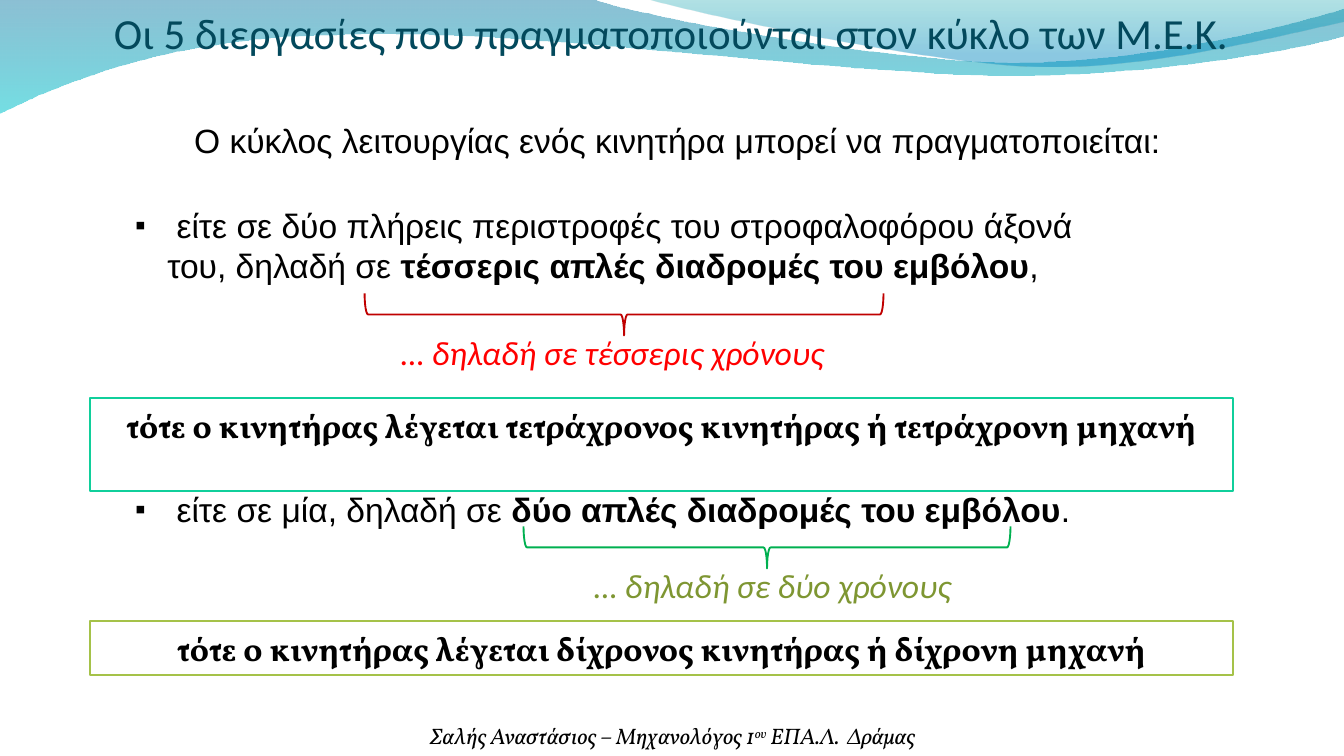
"""Build the slide on the four-stroke and two-stroke engine cycles."""
from lxml.etree import Element, SubElement
from pptx import Presentation
from pptx.dml.color import RGBColor
from pptx.enum.shapes import MSO_SHAPE as Shape
from pptx.enum.text import MSO_ANCHOR as Anchor, MSO_AUTO_SIZE as AutoSize, PP_ALIGN as Align
from pptx.oxml.ns import qn
from pptx.util import Pt

SCALE = 914400 / 134.4
BULLET_INDENT = 32

TITLE = ("Οι 5 διεργασίες που πραγματοποιούνται στον κύκλο των Μ.Ε.Κ.", (26, 0, 1292, 65))
FOOTER = (["Σαλής Αναστάσιος – Μηχανολόγος 1", "ου", " ΕΠΑ.Λ.  Δράμας"], (69, 716, 1207, 40))
INTRO = ("Ο κύκλος λειτουργίας ενός κινητήρα μπορεί να πραγματοποιείται:", (164, 113, 1027, 54))
BULLETS = [
    ([" είτε σε δύο πλήρεις περιστροφές του στροφαλοφόρου άξονά του, δηλαδή σε ",
      "τέσσερις απλές διαδρομές του εμβόλου", ","], (122, 198, 1027, 94)),
    ([" είτε σε μία, δηλαδή σε ", "δύο απλές διαδρομές του εμβόλου", "."],
     (122, 482, 1027, 54)),
]
STROKE_NOTES = [
    ("… δηλαδή σε τέσσερις χρόνους", (388, 325, 452, 54), "FF0000"),
    ("… δηλαδή σε δύο χρόνους", (581, 558, 386, 54), "7E9632"),
]
BRACES = [((603, 55, 42, 519), "C00000"), ((746, 304, 42, 487), "00B050")]
CONCLUSIONS = [
    ("τότε ο κινητήρας λέγεται τετράχρονος κινητήρας ή τετράχρονη μηχανή",
     (90, 398, 1143, 93), "10CF9B"),
    ("τότε ο κινητήρας λέγεται δίχρονος κινητήρας ή δίχρονη μηχανή",
     (90, 621, 1143, 54), "A5C249"),
]
WAVES = [
    {"outline": [(0, 0), (591, -1), (640, 17, 892, 63, 1019, 63), (1146, 63, 1288, 26, 1344, 9),
                 (1345, 36), (1321, 44, 1169, 77, 1003, 76), (836, 75, 513, 28, 345, 35),
                 (173, 36, 62, 83, -1, 114)],
     "stops": [(0, "0074A0", 45), (1, "00C4CD", 55)], "angle": 90},
    {"outline": [(644, -1), (684, 11, 917, 62, 1034, 66), (1150, 70, 1292, 32, 1344, 22),
                 (1344, 0)],
     "stops": [(0.2, "008ABF", 45), (1, "00A0A8", 30)], "angle": 270},
]


def px(length):
    return round(length * SCALE)


def color(value):
    return RGBColor.from_string(value)


def place(shape, box):
    shape.left, shape.top, shape.width, shape.height = map(px, box)


def bend(shape, outline):
    left = min(segment[-2] for segment in outline)
    top = min(segment[-1] for segment in outline)
    lines = list(shape._element.spPr.iter(qn("a:lnTo")))
    for line, segment in zip(lines, outline[1:]):
        if len(segment) == 6:
            line.tag = qn("a:cubicBezTo")
            for index in (0, 1):
                x, y = segment[2 * index:2 * index + 2]
                line.insert(index, Element(qn("a:pt"), x=str(x - left), y=str(y - top)))


def add_wave(slide, outline, stops, angle):
    anchors = [segment[-2:] for segment in outline]
    builder = slide.shapes.build_freeform(*anchors[0], scale=SCALE)
    builder.add_line_segments(anchors[1:])
    shape = builder.convert_to_shape()
    bend(shape, outline)
    shape.shadow.inherit = False
    shape.line.fill.background()
    shape.fill.gradient()
    shape.fill.gradient_angle = (360 - angle) % 360
    for stop, (position, value, _) in zip(shape.fill.gradient_stops, stops):
        stop.position = position
        stop.color.rgb = color(value)
    for element, (_, _, opacity) in zip(shape._element.spPr.iter(qn("a:srgbClr")), stops):
        SubElement(element, qn("a:alpha"), val=str(opacity * 1000))


def write(shape, runs, font, size, value="000000", align=Align.CENTER, wrap=True,
          bold=False, italic=False):
    frame = shape.text_frame
    frame.word_wrap = wrap
    frame.auto_size = AutoSize.NONE
    frame.vertical_anchor = Anchor.TOP
    paragraph = frame.paragraphs[0]
    paragraph.alignment = align
    for text in [runs] if isinstance(runs, str) else runs:
        paragraph.add_run().text = text
    style = paragraph.font
    style.name, style.size, style.bold, style.italic = font, Pt(size), bold, italic
    style.color.rgb = color(value)
    return paragraph


def add_text(slide, box, *content, **options):
    return write(slide.shapes.add_textbox(*map(px, box)), *content, **options)


def add_bullet(paragraph):
    properties = paragraph._p.get_or_add_pPr()
    properties.set("marL", str(px(BULLET_INDENT)))
    properties.set("indent", str(-px(BULLET_INDENT)))
    bullet_color = SubElement(properties, qn("a:buClr"))
    SubElement(bullet_color, qn("a:srgbClr"), val="000000")
    SubElement(properties, qn("a:buSzPct"), val="90000")
    SubElement(properties, qn("a:buFont"), typeface="Arial")
    SubElement(properties, qn("a:buChar"), char="▪")
    properties.append(properties.find(qn("a:defRPr")))


def add_outline(slide, kind, box, value):
    shape = slide.shapes.add_shape(kind, *map(px, box))
    shape.shadow.inherit = False
    shape.line.color.rgb = color(value)
    shape.line.width = Pt(1)
    return shape


def main():
    presentation = Presentation()
    presentation.slide_width, presentation.slide_height = px(1344), px(756)
    slide = presentation.slides.add_slide(presentation.slide_layouts[5])

    for wave in WAVES:
        add_wave(slide, **wave)
    footer = add_text(slide, FOOTER[1], FOOTER[0], "Vollkorn", 12, italic=True)
    footer.runs[1]._r.get_or_add_rPr().set("baseline", "30000")

    title = slide.shapes.title
    slide.shapes._spTree.append(title._element)
    place(title, TITLE[1])
    write(title, TITLE[0], "Calibri", 23, "03495C")
    add_text(slide, INTRO[1], INTRO[0], "Arial", 18)

    for box, value in BRACES:
        brace = add_outline(slide, Shape.RIGHT_BRACE, box, value)
        brace.rotation = 90
        brace.fill.background()
    for text, box, value in STROKE_NOTES:
        add_text(slide, box, text, "Calibri", 18, value, align=Align.LEFT, wrap=False, italic=True)
    for text, box, value in CONCLUSIONS:
        panel = add_outline(slide, Shape.RECTANGLE, box, value)
        panel.fill.solid()
        panel.fill.fore_color.rgb = color("FFFFFF")
        write(panel, text, "Vollkorn", 18, bold=True)
    for runs, box in BULLETS:
        paragraph = add_text(slide, box, runs, "Arial", 18, align=Align.LEFT)
        add_bullet(paragraph)
        paragraph.runs[1].font.bold = True

    presentation.save("out.pptx")


if __name__ == "__main__":
    main()
